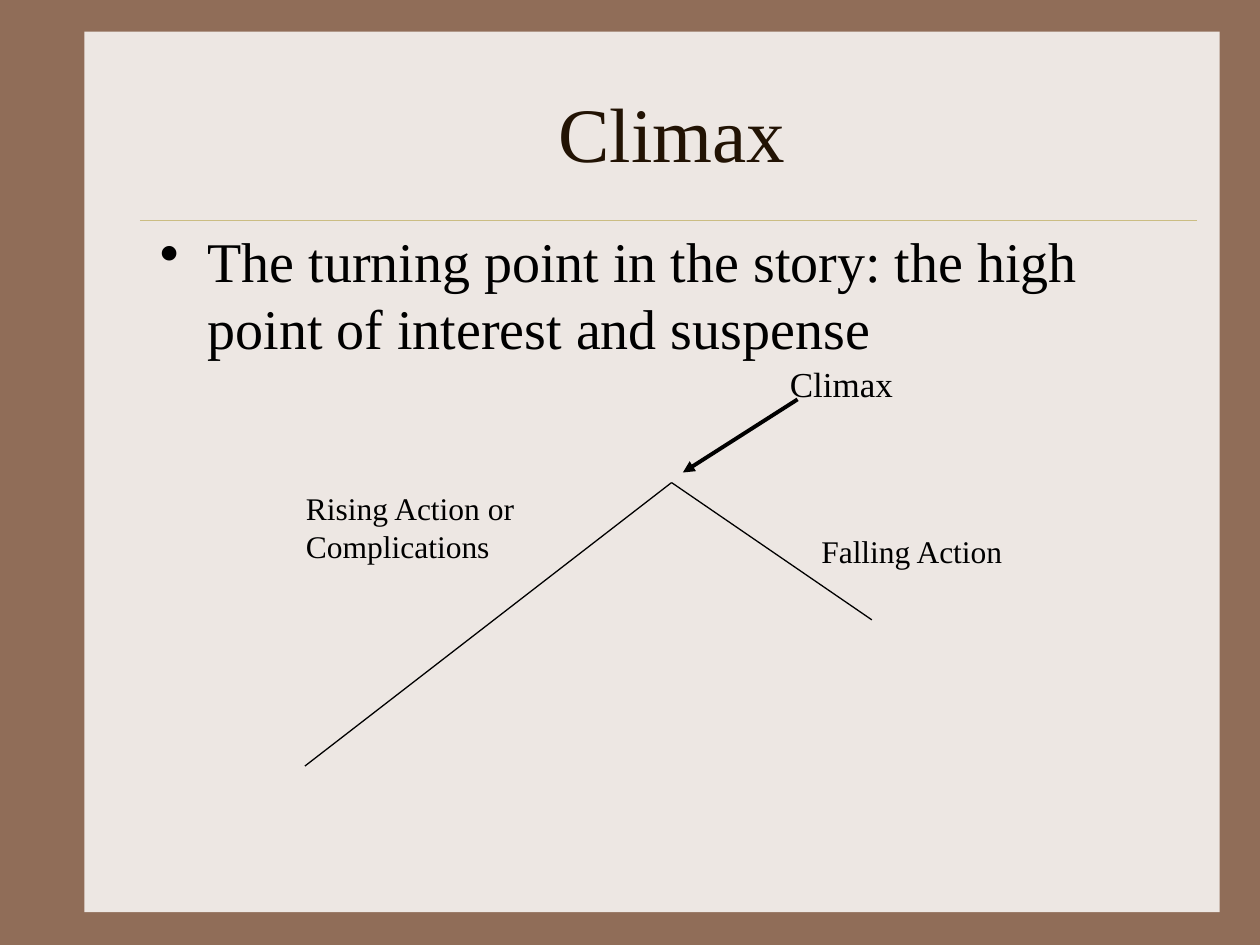
from lxml.etree import SubElement
from pptx import Presentation
from pptx.dml.color import RGBColor
from pptx.enum.shapes import MSO_CONNECTOR, MSO_SHAPE
from pptx.enum.text import MSO_ANCHOR, PP_ALIGN
from pptx.oxml.ns import qn
from pptx.util import Inches, Pt

FONT = "Times New Roman"
BROWN, CREAM, GOLD, DARK, BLACK = "906D58", "EDE7E3", "CBBD83", "221304", "000000"

TITLE = "Climax"
DEFINITION = "The turning point in the story: the high point of interest and suspense"

# text, (left, top, width, height), size
LABELS = [
    ("Rising Action or Complications", (2.33, 3.83, 2.08, 0.7), 18),
    ("Falling Action", (6.42, 4.17, 2.67, 0.4), 18),
    ("Climax", (6.17, 2.83, 2, 0.43), 20),
]

START, PEAK, END = (2.42, 6.08), (5.33, 3.83), (6.92, 4.92)
POINTER = (6.33, 3.17), (5.42, 3.75)


def color(hex_string):
    return RGBColor.from_string(hex_string)


def add_line(slide, start, end, line_color=BLACK, width=0.75, arrow=False):
    line = slide.shapes.add_connector(
        MSO_CONNECTOR.STRAIGHT, *(Inches(v) for v in (*start, *end)))
    line.line.color.rgb = color(line_color)
    line.line.width = Pt(width)
    if arrow:
        SubElement(line.line._get_or_add_ln(), qn("a:tailEnd"), type="triangle")
    SubElement(line._element.spPr, qn("a:effectLst"))


def add_text(slide, text, box, size, text_color=BLACK, bullet=False):
    frame = slide.shapes.add_textbox(*(Inches(v) for v in box)).text_frame
    frame.word_wrap = True
    paragraph = frame.paragraphs[0]
    paragraph.text = text
    if bullet:
        properties = paragraph._p.get_or_add_pPr()
        properties.set("marL", str(Inches(0.38)))
        properties.set("indent", str(Inches(-0.38)))
        SubElement(properties, qn("a:buChar"), char="•")
    paragraph.font.name = FONT
    paragraph.font.size = Pt(size)
    paragraph.font.color.rgb = color(text_color)
    return frame


def main():
    prs = Presentation()
    prs.slide_width, prs.slide_height = Inches(10), Inches(7.5)
    slide = prs.slides.add_slide(prs.slide_layouts[6])
    slide.background.fill.solid()
    slide.background.fill.fore_color.rgb = color(BROWN)

    panel = slide.shapes.add_shape(
        MSO_SHAPE.RECTANGLE, *(Inches(v) for v in (0.67, 0.25, 9.01, 6.99)))
    panel.shadow.inherit = False
    panel.fill.solid()
    panel.fill.fore_color.rgb = color(CREAM)
    panel.line.fill.background()
    add_line(slide, (1.11, 1.75), (9.5, 1.75), GOLD)

    title = add_text(slide, TITLE, (1.17, 0.42, 8.33, 1.25), 44, DARK)
    title.vertical_anchor = MSO_ANCHOR.MIDDLE
    title.paragraphs[0].alignment = PP_ALIGN.CENTER
    add_text(slide, DEFINITION, (1.17, 1.75, 8.5, 4.5), 32, bullet=True)

    add_line(slide, START, PEAK)
    add_line(slide, PEAK, END)
    add_line(slide, *POINTER, width=2.25, arrow=True)
    for text, box, size in LABELS:
        add_text(slide, text, box, size)

    prs.save("out.pptx")


if __name__ == "__main__":
    main()
